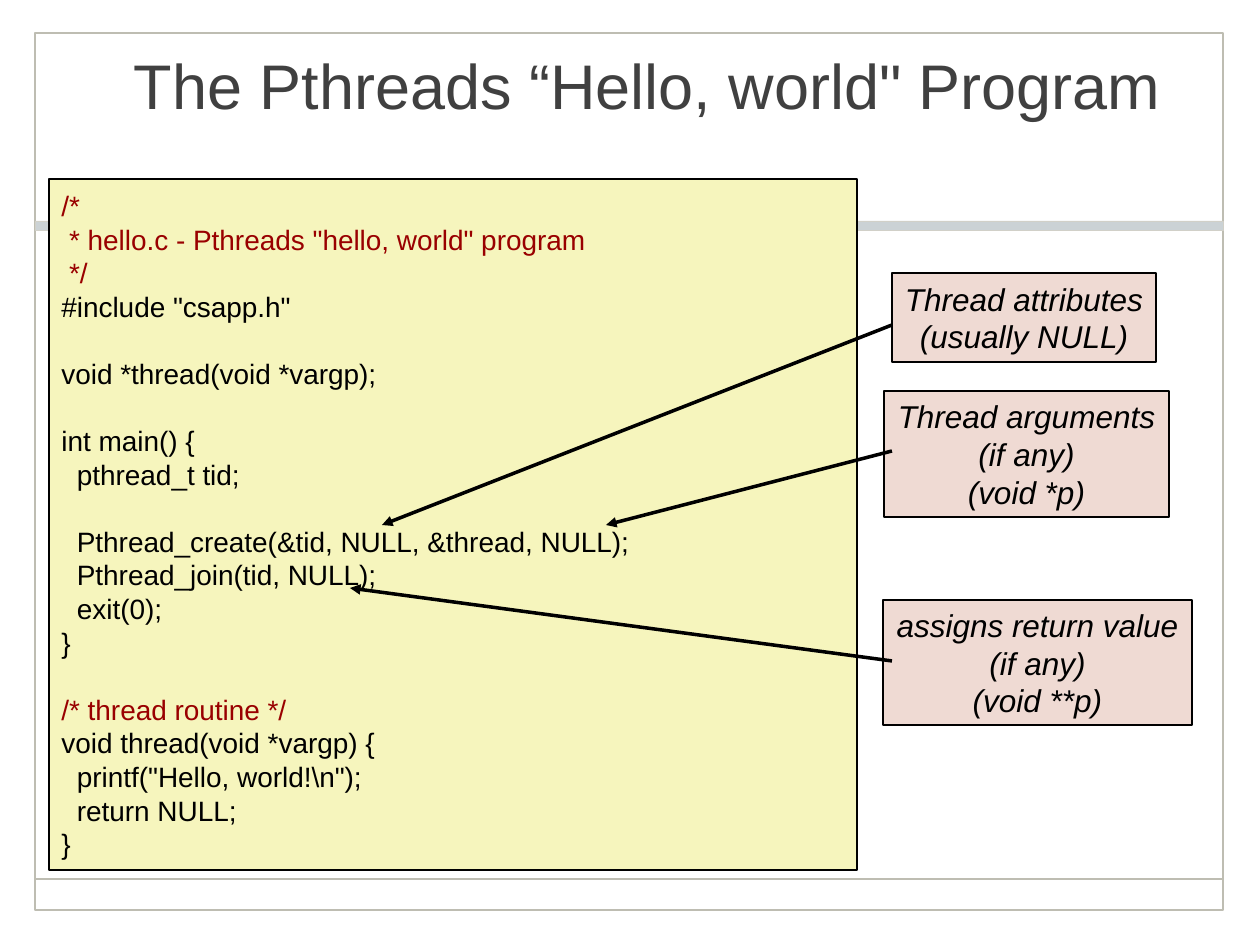
from pptx import Presentation
from pptx.util import Emu, Pt
from pptx.dml.color import RGBColor
from pptx.enum.shapes import MSO_CONNECTOR, MSO_SHAPE
from pptx.enum.text import MSO_ANCHOR, PP_ALIGN
from pptx.oxml.ns import qn
from lxml.etree import SubElement

# Content
TITLE = "The Pthreads “Hello, world\" Program"
CODE = r'''/*
 * hello.c - Pthreads "hello, world" program
 */
#include "csapp.h"

void *thread(void *vargp);

int main() {
  pthread_t tid;

  Pthread_create(&tid, NULL, &thread, NULL);
  Pthread_join(tid, NULL);
  exit(0);
}

/* thread routine */
void thread(void *vargp) {
  printf("Hello, world!\n");
  return NULL;
}'''
NOTES = [  # text, box, arrow start y, arrow tip
    ("Thread attributes\n(usually NULL)", (892, 273, 264, 89), 325, (382, 525)),
    ("Thread arguments\n(if any)\n(void *p)", (884, 391, 285, 126), 451, (606, 525)),
    ("assigns return value\n(if any)\n(void **p)", (883, 600, 309, 125), 661, (350, 588)),
]
ARROW_X = 892
COLORS = {
    "title": "404040", "ink": "000000", "remark": "990000",
    "code": "F6F5BD", "note": "EFDAD3",
    "frame": "BEBDB2", "band": "CBD2D5", "edge": "D1D0C8",
}
FONT = "Arial"


def px(n):
    return Emu(round(n * 914400 / 126))


def color(name):
    return RGBColor.from_string(COLORS[name])


def add_box(area, fill, line, width=1):
    box = slide.shapes.add_shape(MSO_SHAPE.RECTANGLE, *map(px, area))
    box.shadow.inherit = False
    if fill:
        box.fill.solid()
        box.fill.fore_color.rgb = color(fill)
    else:
        box.fill.background()
    box.line.color.rgb = color(line)
    box.line.width = Pt(width)
    return box


def add_line(start, end, ink, width, arrow=False):
    line = slide.shapes.add_connector(
        MSO_CONNECTOR.STRAIGHT, *map(px, start + end))
    line.line.color.rgb = color(ink)
    line.line.width = Pt(width)
    if arrow:
        SubElement(line.line._get_or_add_ln(), qn("a:tailEnd"), type="triangle")
    SubElement(line._element.spPr, qn("a:effectLst"))


def set_text(shape, text, size, align, wrap=True, ink="ink", italic=False):
    frame = shape.text_frame
    frame.text = text
    frame.word_wrap = wrap
    frame.vertical_anchor = MSO_ANCHOR.MIDDLE
    for par in frame.paragraphs:
        par.alignment = align
        par.font.size = Pt(size)
        for run in par.runs:
            font = run.font
            font.name, font.size, font.italic = FONT, Pt(size), italic
            font.color.rgb = color(ink)
    return frame


deck = Presentation()
deck.slide_width, deck.slide_height = px(1260), px(945)
slide = deck.slides.add_slide(deck.slide_layouts[5])

# Frame, footer rule and band
add_box((35, 33, 1188, 877), None, "frame")
add_line((35, 879), (1223, 879), "frame", 1)
add_box((35, 221, 1188, 9), "band", "edge", 0.25)

# Title
title = slide.shapes.title
title.left, title.top, title.width, title.height = map(px, (49, 32, 1197, 105))
set_text(title, TITLE, 36, PP_ALIGN.CENTER, ink="title")

# Code, with its remarks in red
panel = add_box((49, 179, 808, 691), "code", "ink")
code = set_text(panel, CODE, 16, PP_ALIGN.LEFT)
for par in code.paragraphs:
    if par.text.lstrip().startswith(("/*", "* ", "*/")):
        for run in par.runs:
            run.font.color.rgb = color("remark")

# Notes, then arrows on top
for text, area, _, _ in NOTES:
    set_text(add_box(area, "note", "ink"), text, 18, PP_ALIGN.CENTER,
             wrap=False, italic=True)
for _, _, y, tip in NOTES:
    add_line((ARROW_X, y), tip, "ink", 2, arrow=True)

deck.save("out.pptx")
